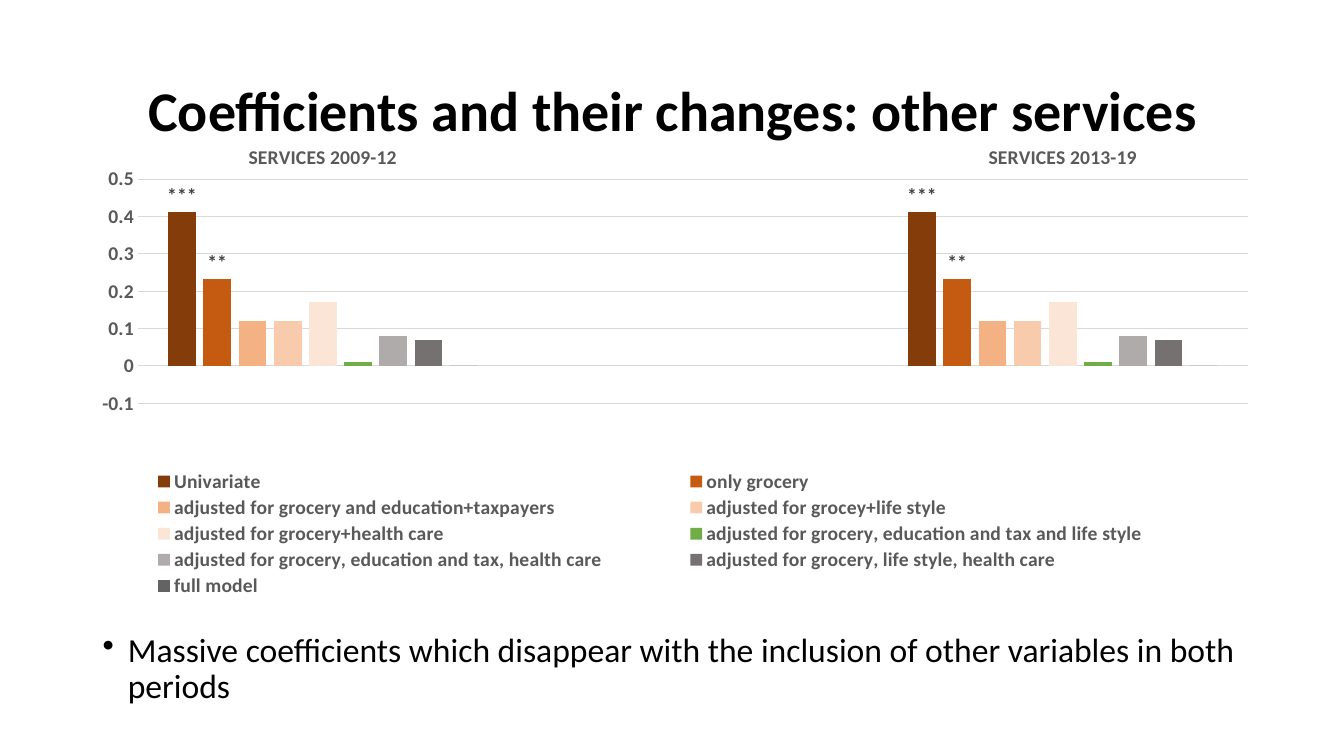
from dataclasses import dataclass

from lxml import etree
from pptx import Presentation, util as u
from pptx.chart.data import CategoryChartData
from pptx.dml.color import RGBColor
from pptx.enum import chart as ch, text as t
from pptx.oxml import ns


@dataclass(frozen=True)
class Theme:
    face: str = "Calibri"
    ink: str = "000000"
    soft: str = "595959"
    star: str = "404040"
    grid: str = "D9D9D9"
    head: int = 40
    body: int = 24
    small: int = 14
    hair: float = 0.75


@dataclass(frozen=True)
class Box:
    """Left, top, width and height as shares of the whole."""
    x: float
    y: float
    w: float
    h: float


@dataclass(frozen=True)
class Model:
    name: str
    value: float
    fill: str
    stars: str = ""


THEME = Theme()
WIDE, HIGH = u.Inches(13.33), u.Inches(7.5)
HEAD = Box(0.069, 0.053, 0.863, 0.193)
PLOT = Box(0.0555, 0.192, 0.889, 0.617)
NOTE = Box(0.069, 0.831, 0.863, 0.132)
INNER = Box(0.053, 0.07, 0.929, 0.482)
KEY = Box(0.002, 0.69, 0.96, 0.285)

MODELS = [
    Model("Univariate", 0.413, "843C0B", "***"),
    Model("only grocery", 0.233, "C55A11", "**"),
    Model("adjusted for grocery and education+taxpayers", 0.12, "F4B183"),
    Model("adjusted for grocey+life style", 0.12, "F8CBAD"),
    Model("adjusted for grocery+health care", 0.17, "FBE5D6"),
    Model("adjusted for grocery, education and tax and life style", 0.01, "70AD47"),
    Model("adjusted for grocery, education and tax, health care", 0.08, "AFABAB"),
    Model("adjusted for grocery, life style, health care", 0.07, "767171"),
    Model("full model", 0, "636363"),
]


def place(box: Box) -> tuple[int, int, int, int]:
    return (int(box.x * WIDE), int(box.y * HIGH),
            int(box.w * WIDE), int(box.h * HIGH))


def style(font, size: int, tone: str, bold: bool = False) -> None:
    font.name = THEME.face
    font.size = u.Pt(size)
    font.bold = bold
    font.color.rgb = RGBColor.from_string(tone)


def rule(line) -> None:
    line.color.rgb = RGBColor.from_string(THEME.grid)
    line.width = u.Pt(THEME.hair)


def pin(box: Box, inner: bool = False):
    """Build a manual chart layout."""
    layout = etree.Element(ns.qn("c:layout"))
    manual = etree.SubElement(layout, ns.qn("c:manualLayout"))
    parts = [("layoutTarget", "inner")] if inner else []
    parts += [("xMode", "edge"), ("yMode", "edge")]
    parts += [(key, str(getattr(box, key))) for key in "xywh"]
    for tag, val in parts:
        etree.SubElement(manual, ns.qn(f"c:{tag}")).set("val", val)
    return layout


def add_head(slide) -> None:
    title = slide.shapes.title
    title.left, title.top, title.width, title.height = place(HEAD)
    frame = title.text_frame
    frame.text = "Coefficients and their changes: other services"
    frame.vertical_anchor = t.MSO_ANCHOR.MIDDLE
    para = frame.paragraphs[0]
    para.alignment = t.PP_ALIGN.CENTER
    para.line_spacing = 0.9
    style(para.font, THEME.head, THEME.ink, True)


def add_note(slide) -> None:
    frame = slide.shapes.add_textbox(*place(NOTE)).text_frame
    frame.word_wrap = True
    para = frame.paragraphs[0]
    para.text = ("Massive coefficients which disappear with the inclusion "
                 "of other variables in both periods")
    para.line_spacing = 0.9
    para.space_before = u.Pt(10)
    style(para.font, THEME.body, THEME.ink)
    props = para._p.get_or_add_pPr()
    props.set("marL", str(u.Inches(0.25)))
    props.set("indent", str(-u.Inches(0.25)))
    mark = etree.Element(ns.qn("a:buChar"), char="•")
    props.find(ns.qn("a:defRPr")).addprevious(mark)


def add_stars(bars, stars: str) -> None:
    labels = bars.data_labels
    labels.show_value = True
    labels.position = ch.XL_LABEL_POSITION.OUTSIDE_END
    style(labels.font, THEME.small, THEME.star, True)
    for spot in (0, 2):
        label = bars.points[spot].data_label
        run = label.text_frame.paragraphs[0].add_run()
        run.text = stars
        style(run.font, THEME.small, THEME.star, True)
        label.position = ch.XL_LABEL_POSITION.OUTSIDE_END


def set_axes(chart) -> None:
    cats, vals = chart.category_axis, chart.value_axis
    for axis in (cats, vals):
        axis.major_tick_mark = axis.minor_tick_mark = ch.XL_TICK_MARK.NONE
        style(axis.tick_labels.font, THEME.small, THEME.soft, True)
    cats.tick_label_position = ch.XL_TICK_LABEL_POSITION.HIGH
    rule(cats.format.line)
    vals.minimum_scale, vals.maximum_scale = -0.1, 0.5
    vals.major_unit = 0.1
    vals.format.line.fill.background()
    rule(vals.major_gridlines.format.line)


def add_bars(slide) -> None:
    data = CategoryChartData()
    data.categories = ["SERVICES 2009-12", "", "SERVICES 2013-19"]
    for model in MODELS:
        data.add_series(model.name, (model.value, None, model.value))
    chart = slide.shapes.add_chart(
        ch.XL_CHART_TYPE.COLUMN_CLUSTERED, *place(PLOT), data).chart
    chart.has_title = False
    style(chart.font, THEME.small, THEME.ink, True)
    set_axes(chart)
    plot = chart.plots[0]
    plot.gap_width, plot.overlap = 219, -27
    plot.vary_by_categories = False
    for model, bars in zip(MODELS, plot.series):
        bars.invert_if_negative = False
        bars.format.fill.solid()
        bars.format.fill.fore_color.rgb = RGBColor.from_string(model.fill)
        if model.stars:
            add_stars(bars, model.stars)
    chart.has_legend = True
    key = chart.legend
    key.position = ch.XL_LEGEND_POSITION.BOTTOM
    key.include_in_layout = False
    style(key.font, THEME.small, THEME.soft, True)
    for tag, box, inner in (("plotArea", INNER, True), ("legend", KEY, False)):
        area = chart._chartSpace.chart.find(ns.qn(f"c:{tag}"))
        for old in area.findall(ns.qn("c:layout")):
            area.remove(old)
        area.insert(0 if inner else 1, pin(box, inner))


def main() -> None:
    deck = Presentation()
    deck.slide_width, deck.slide_height = WIDE, HIGH
    slide = deck.slides.add_slide(deck.slide_layouts[5])
    add_head(slide)
    add_note(slide)
    add_bars(slide)
    deck.save("out.pptx")


if __name__ == "__main__":
    main()
